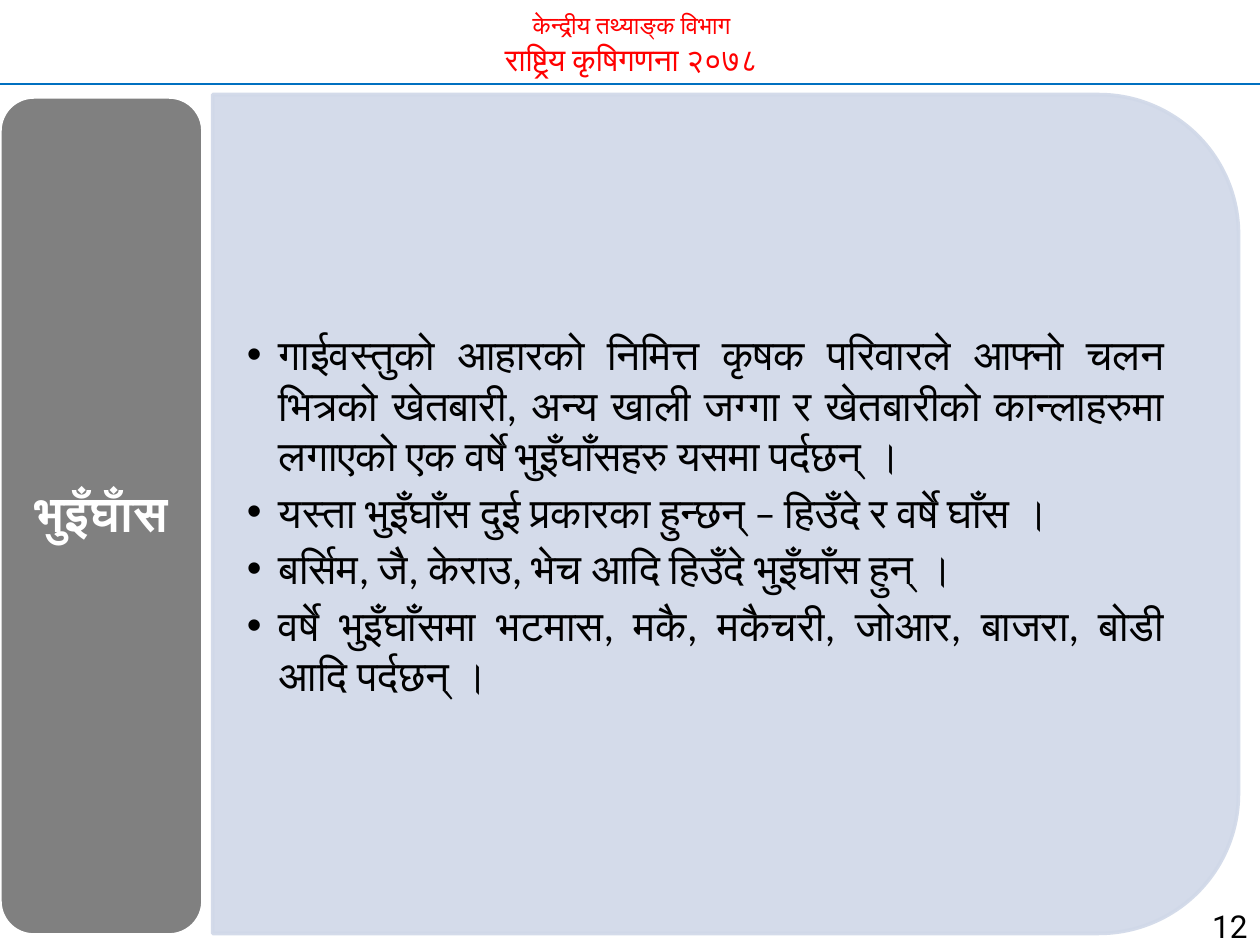
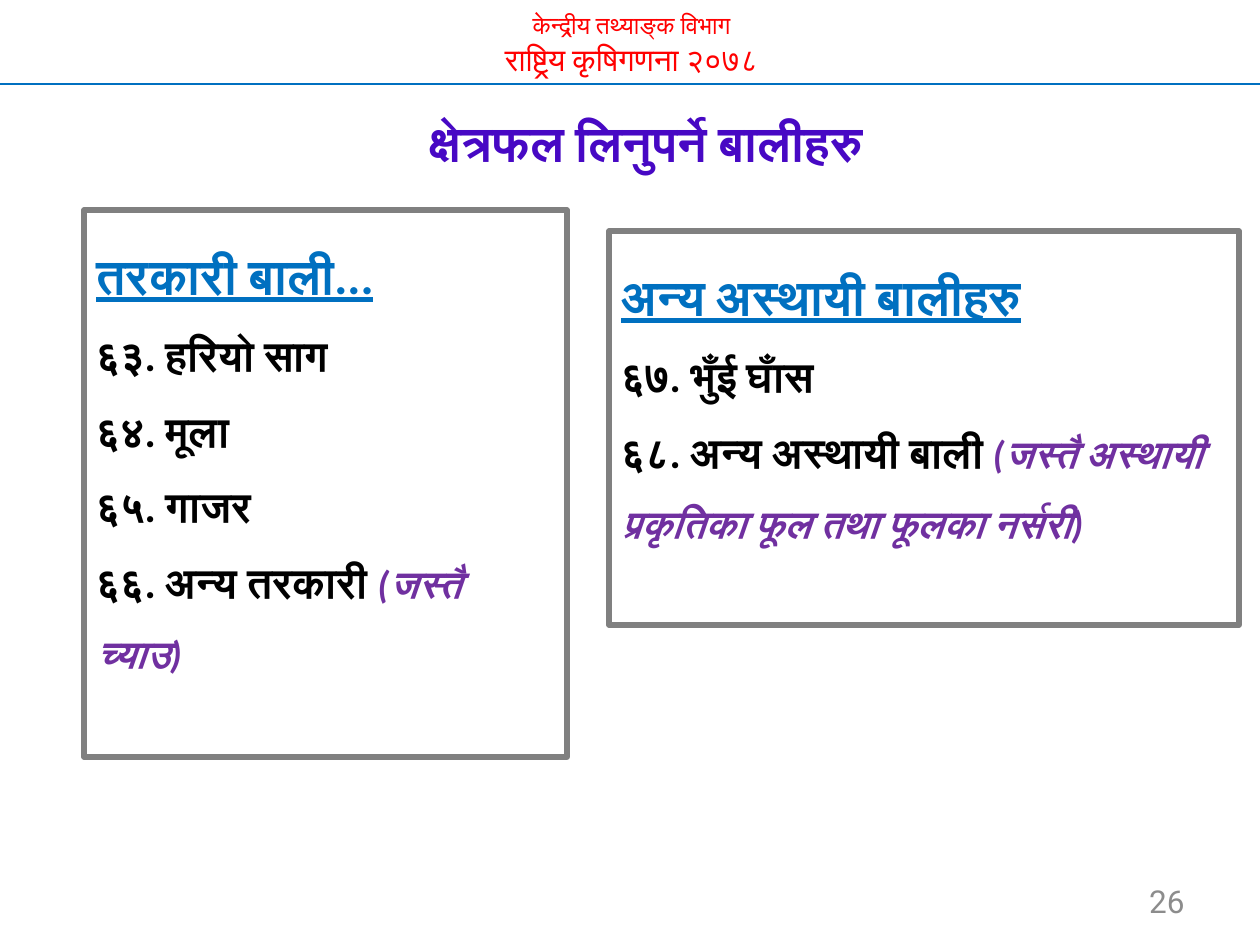
from lxml import etree
from pptx import Presentation
from pptx.dml.color import RGBColor
from pptx.enum.shapes import MSO_CONNECTOR, MSO_SHAPE
from pptx.enum.text import MSO_ANCHOR, PP_ALIGN
from pptx.oxml.ns import qn
from pptx.util import Emu, Pt

RECT, ROUND_RECT = MSO_SHAPE.RECTANGLE, MSO_SHAPE.ROUNDED_RECTANGLE
ROUND_TOP = MSO_SHAPE.ROUND_2_SAME_RECTANGLE
STRAIGHT = MSO_CONNECTOR.STRAIGHT
TOP, MIDDLE = MSO_ANCHOR.TOP, MSO_ANCHOR.MIDDLE
LEFT, CENTER, RIGHT = PP_ALIGN.LEFT, PP_ALIGN.CENTER, PP_ALIGN.RIGHT
JUSTIFY = PP_ALIGN.JUSTIFY

PX_PER_INCH = 126
BODY_FONT, NUMBER_FONT = "Calibri", "Roboto"
RED, BLUE, GRAY, WHITE, BLACK = "FF0000", "0070C0", "808080", "FFFFFF", "000000"
PANEL, PURPLE, VIOLET, PALE_GRAY = "D0D8E8", "7030A0", "4708C4", "8C8C8C"


def px(length):
    return Emu(round(length * 914400 / PX_PER_INCH))


def color(value):
    return RGBColor.from_string(value)


def run(text, size, rgb, font=BODY_FONT, **style):
    """Describe one run: its text and its look."""
    return text, size, rgb, font, style


class Deck:
    def __init__(self, width, height):
        self.prs = Presentation()
        self.prs.slide_width, self.prs.slide_height = px(width), px(height)
        self.width = width
        self.slide = None

    def new_slide(self):
        """Start a slide with the shared header and rule."""
        self.slide = self.prs.slides.add_slide(self.prs.slide_layouts[6])
        self.text((88, 4, 1087, 81), [
            [run("केन्द्रीय तथ्याङ्क विभाग", 14, RED)],
            [run("राष्ट्रिय कृषिगणना २०७८", 18, RED)],
        ], align=CENTER)
        self.rule(84)

    def rule(self, y):
        line = self.slide.shapes.add_connector(STRAIGHT, 0, px(y), px(self.width), px(y))
        line.line.color.rgb = color(BLUE)
        line.line.width = Pt(1.5)
        etree.SubElement(line._element.spPr, qn("a:effectLst"))

    def shape(self, kind, box, fill, outline, weight, rotation=0, opacity=100):
        item = self.slide.shapes.add_shape(kind, *map(px, box))
        item.shadow.inherit = False
        item.rotation = rotation
        if fill:
            item.fill.solid()
            item.fill.fore_color.rgb = color(fill)
        else:
            item.fill.background()
        item.line.color.rgb = color(outline)
        item.line.width = Pt(weight)
        if opacity < 100:
            for rgb in item._element.spPr.iter(qn("a:srgbClr")):
                etree.SubElement(rgb, qn("a:alpha"), val=str(opacity * 1000))
        return item

    def text(self, box, paragraphs, **layout):
        self.fill_text(self.slide.shapes.add_textbox(*map(px, box)), paragraphs, **layout)

    def fill_text(self, item, paragraphs, align=LEFT, anchor=TOP, spacing=None,
                  after=0, margins=None, bullet=False):
        frame = item.text_frame
        frame.word_wrap = True
        frame.vertical_anchor = anchor
        if margins:
            frame.margin_left = frame.margin_right = px(margins[0])
            frame.margin_top = frame.margin_bottom = px(margins[1])
        for i, runs in enumerate(paragraphs):
            para = frame.paragraphs[0] if i == 0 else frame.add_paragraph()
            para.alignment = align
            para.space_after = Pt(after)
            if spacing:
                para.line_spacing = spacing
            if bullet:
                self.bullet(para)
            for text, size, rgb, font, style in runs:
                piece = para.add_run()
                piece.text = text
                piece.font.size = Pt(size)
                piece.font.color.rgb = color(rgb)
                piece.font.name = font
                piece.font.bold = style.get("bold")
                piece.font.italic = style.get("italic")
                piece.font.underline = style.get("underline")
                # Devanagari takes its font from the complex-script slot
                etree.SubElement(piece._r.get_or_add_rPr(), qn("a:cs"), typeface=font)

    def bullet(self, para):
        props = para._p.get_or_add_pPr()
        indent = px(32)
        props.set("marL", str(indent))
        props.set("indent", str(-indent))
        etree.SubElement(props, qn("a:buFont"), typeface="Arial")
        etree.SubElement(props, qn("a:buChar"), char="•")

    def crop_box(self, box, heading, crops, example):
        """Framed crop list; the example follows the last crop."""
        rows = [[run(heading, 28, BLUE, bold=True, underline=True)]]
        rows += [[run(crop, 24, BLACK, bold=True)] for crop in crops]
        rows[-1].append(run(example, 22, PURPLE, bold=True, italic=True))
        self.fill_text(self.shape(RECT, box, None, GRAY, 3), rows, spacing=1.5)


def fodder_slide(deck):
    deck.new_slide()
    # Definition panel, rounded on its right side
    deck.shape(ROUND_TOP, (306, 1, 839, 1026), PANEL, PANEL, 2, rotation=90, opacity=90)
    definitions = [
        "गाईवस्तुको आहारको निमित्त कृषक परिवारले आफ्नो चलन भित्रको खेतबारी, "
        "अन्य खाली जग्गा र खेतबारीको कान्लाहरुमा लगाएको एक वर्षे भुइँघाँसहरु यसमा पर्दछन् ।",
        "यस्ता भुइँघाँस दुई प्रकारका हुन्छन् – हिउँदे र वर्षे घाँस ।",
        "बर्सिम, जै, केराउ, भेच आदि हिउँदे भुइँघाँस हुन् ।",
        "वर्षे भुइँघाँसमा भटमास, मकै, मकैचरी, जोआर, बाजरा, बोडी आदि पर्दछन् ।",
    ]
    deck.text((213, 136, 985, 757), [[run(line, 24, BLACK)] for line in definitions],
              align=JUSTIFY, anchor=MIDDLE, after=3.6, margins=(34, 18), bullet=True)
    # Topic tab
    topic = deck.shape(ROUND_RECT, (0, 97, 203, 838), GRAY, WHITE, 2)
    deck.fill_text(topic, [[run("भुइँघाँस", 28, WHITE, bold=True)]],
                   align=CENTER, anchor=MIDDLE, spacing=0.9, margins=(15, 8))
    # Page number
    deck.text((1163, 882, 97, 53), [[run("12", 18, BLACK, NUMBER_FONT)]],
              align=RIGHT, spacing=1.5)


def crops_slide(deck):
    deck.new_slide()
    # Page number
    deck.text((903, 876, 294, 50), [[run("26", 18, PALE_GRAY, NUMBER_FONT)]],
              align=RIGHT, anchor=MIDDLE)
    # Crop lists
    deck.crop_box((84, 210, 483, 547), "तरकारी बाली...",
                  ["६३. हरियो साग", "६४. मूला", "६५. गाजर", "६६. अन्य तरकारी "],
                  "(जस्तै च्याउ)")
    deck.crop_box((609, 231, 630, 394), "अन्य अस्थायी बालीहरु",
                  ["६७. भुँई घाँस", "६८. अन्य अस्थायी बाली "],
                  "(जस्तै अस्थायी प्रकृतिका फूल तथा फूलका नर्सरी)")
    # Title
    title = deck.shape(RECT, (58, 95, 1176, 94), WHITE, WHITE, 2)
    deck.fill_text(title, [[run("क्षेत्रफल लिनुपर्ने बालीहरु", 28, VIOLET, bold=True)]],
                   align=CENTER, anchor=MIDDLE)


def main():
    deck = Deck(1260, 945)
    fodder_slide(deck)
    crops_slide(deck)
    deck.prs.save("out.pptx")


if __name__ == "__main__":
    main()
